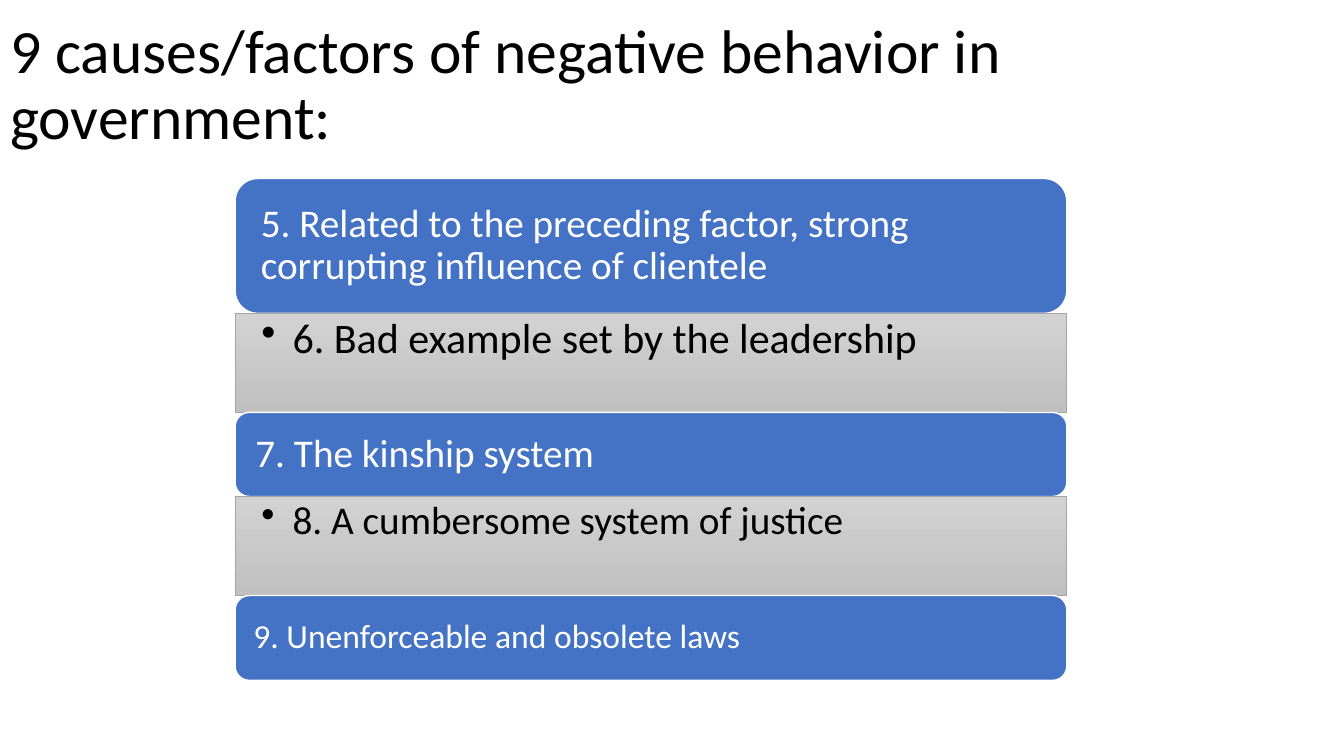
from lxml import etree
from pptx import Presentation, util as u
from pptx.dml.color import RGBColor
from pptx.enum import shapes, text
from pptx.oxml import ns

COLORS = {"ink": "000000", "white": "FFFFFF", "blue": "4472C4",
          "gray_top": "D2D2D2", "gray_bottom": "C0C0C0", "gray_line": "A5A5A5"}
COLS, ROWS = 160, 90
STACK_LEFT, STACK_TOP, STACK_WIDTH = 28, 21.25, 99

# kind, rows, text, size, left inset in columns
FACTORS = [
    ("header", 16.05, "5. Related to the preceding factor, strong corrupting influence of clientele", 28, 2.28),
    ("detail", 11.8, "6. Bad example set by the leadership", 30, 3.12),
    ("header", 10, "7. The kinship system", 28, 1.92),
    ("detail", 11.8, "8. A cumbersome system of justice", 28, 3.12),
    ("header", 10.1, "9. Unenforceable and obsolete laws", 24, 1.68),
]


def rgb(name):
    return RGBColor.from_string(COLORS[name])


class Deck:
    """Holds the style, the grid and the current slide."""
    font = "Calibri"

    def __init__(self):
        self.prs = Presentation()
        self.prs.slide_width, self.prs.slide_height = u.Inches(13.33), u.Inches(7.5)
        self.s = self.prs.slides.add_slide(self.prs.slide_layouts[6])

    def x(self, cols):
        return round(self.prs.slide_width * cols / COLS)

    def y(self, rows):
        return round(self.prs.slide_height * rows / ROWS)

    def box(self, left, top, width, height):
        return self.x(left), self.y(top), self.x(width), self.y(height)

    def add_text(self, sp, words, size, color, inset, inset_y, anchor, bullet=False):
        tf = sp.text_frame
        tf.word_wrap = True
        tf.vertical_anchor = anchor
        tf.margin_left = tf.margin_right = self.x(inset)
        tf.margin_top = tf.margin_bottom = self.y(inset_y)
        p = tf.paragraphs[0]
        p.alignment = text.PP_ALIGN.LEFT
        p.line_spacing = 0.9
        if bullet:
            pPr = p._p.get_or_add_pPr()
            pPr.set("marL", str(u.Inches(0.31)))
            pPr.set("indent", str(-u.Inches(0.31)))
            etree.SubElement(pPr, ns.qn("a:buChar")).set("char", "•")
        r = p.add_run()
        r.text = words
        r.font.name, r.font.size = self.font, u.Pt(size)
        r.font.color.rgb = rgb(color)

    def title(self, words):
        sp = self.s.shapes.add_textbox(*self.box(0, 4.8, COLS, 11))
        self.add_text(sp, words, 44, "ink", 1.2, 0.6, text.MSO_ANCHOR.MIDDLE)

    def shape(self, kind, box, line, line_width):
        sp = self.s.shapes.add_shape(kind, *self.box(*box))
        sp.shadow.inherit = False
        sp.line.color.rgb = rgb(line)
        sp.line.width = u.Pt(line_width)
        return sp

    def header(self, box, words, size, inset):
        sp = self.shape(shapes.MSO_SHAPE.ROUNDED_RECTANGLE, box, "white", 1)
        sp.fill.solid()
        sp.fill.fore_color.rgb = rgb("blue")
        self.add_text(sp, words, size, "white", inset, 1.5, text.MSO_ANCHOR.MIDDLE)

    def detail(self, box, words, size, inset):
        sp = self.shape(shapes.MSO_SHAPE.RECTANGLE, box, "gray_line", 0.5)
        sp.fill.gradient()
        sp.fill.gradient_angle = 270
        for stop, name in zip(sp.fill.gradient_stops, ("gray_top", "gray_bottom")):
            stop.color.rgb = rgb(name)
        self.add_text(sp, words, size, "ink", inset, 0.48, text.MSO_ANCHOR.TOP, bullet=True)


def main():
    deck = Deck()
    deck.title("9 causes/factors of negative behavior in government:")
    draw = {"header": deck.header, "detail": deck.detail}
    top = STACK_TOP
    for kind, rows, words, size, inset in FACTORS:
        draw[kind]((STACK_LEFT, top, STACK_WIDTH, rows), words, size, inset)
        top += rows
    deck.prs.save("out.pptx")


if __name__ == "__main__":
    main()
